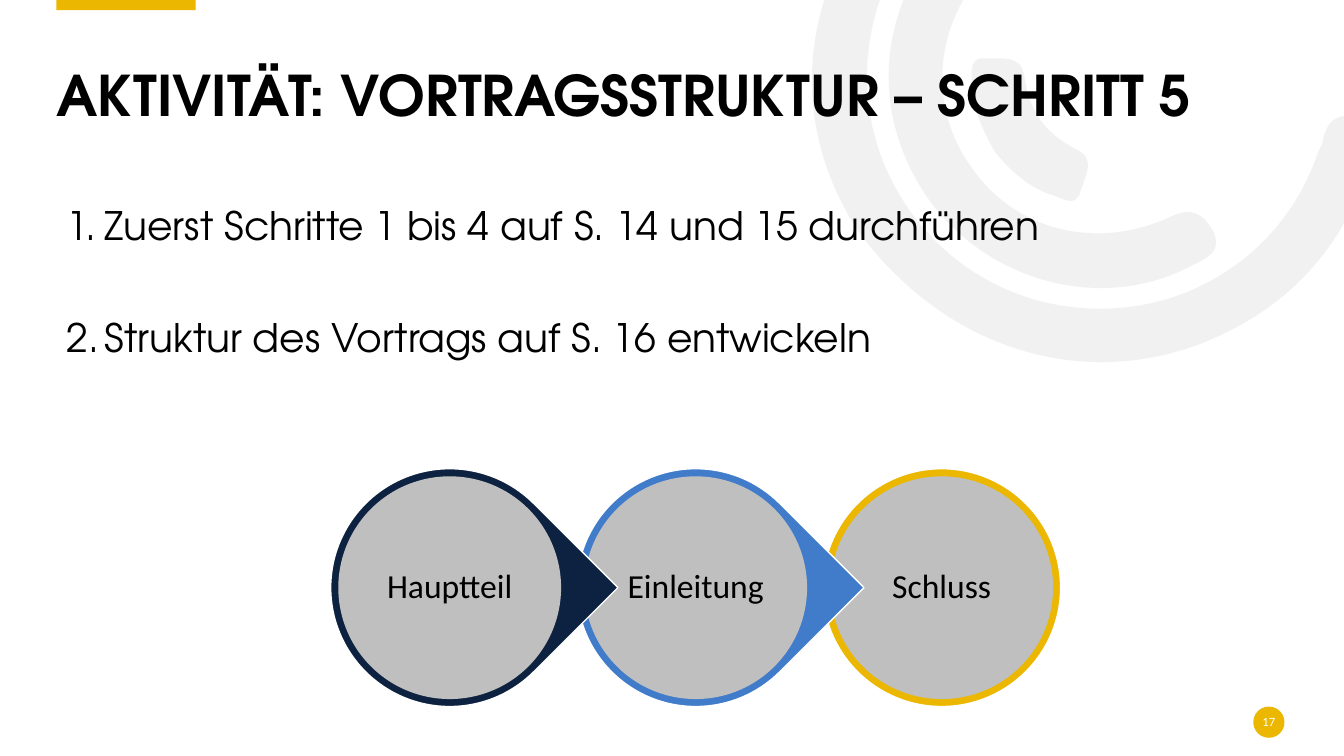
import pptx
import pptx.util
import pptx.dml.color
import pptx.enum.shapes
import pptx.enum.text
from lxml import etree

Inches, Pt = pptx.util.Inches, pptx.util.Pt
SHAPE = pptx.enum.shapes.MSO_SHAPE
ALIGN = pptx.enum.text.PP_ALIGN
ANCHOR = pptx.enum.text.MSO_ANCHOR
DRAWING = "{http://schemas.openxmlformats.org/drawingml/2006/main}"

HEADLINE = "AKTIVITÄT: VORTRAGSSTRUKTUR – SCHRITT 5"
TASKS = ["Zuerst Schritte 1 bis 4 auf S. 14 und 15 durchführen",
         "Struktur des Vortrags auf S. 16 entwickeln"]
STAGES = [("Hauptteil", "0D2240"), ("Einleitung", "407CCA"), ("Schluss", "EBB700")]
PAGE = "17"
HEAD_FONT, LABEL_FONT = "TeX Gyre Adventor", "Calibri"
GOLD, GREY, PALE, BLACK, WHITE = "EBB700", "BFBFBF", "E7E6E6", "000000", "FFFFFF"

ARCS = [
    ((8.51, 2.29), [
        (7.99, 1.49, 7.87, 0.5, 8.38, -0.5), (8.9, -1.52, 9.76, -2.03, 10.9, -2.07),
        (11.05, -2.07, 11.21, -2.1, 11.31, -1.95), (11.44, -1.75, 11.27, -1.54, 10.98, -1.54),
        (9.67, -1.54, 8.65, -0.59, 8.6, 0.68), (8.56, 1.81, 9.36, 2.81, 10.46, 3.02),
        (11.6, 3.24, 12.7, 2.61, 13.07, 1.52), (13.09, 1.48, 13.11, 1.44, 13.12, 1.4),
        (13.16, 1.19, 13.27, 1.11, 13.49, 1.17), (13.73, 1.24, 13.67, 1.41, 13.61, 1.56),
        (13.34, 2.45, 12.78, 3.07, 11.91, 3.41), (10.7, 3.87, 9.36, 3.45, 8.51, 2.29)]),
    ((9.22, 1.99), [
        (8.62, 1.15, 8.69, 0.07, 9.4, -0.68), (9.51, -0.79, 9.62, -0.95, 9.8, -0.78),
        (9.95, -0.64, 9.97, -0.5, 9.79, -0.32), (9.25, 0.26, 9.2, 1.08, 9.65, 1.68),
        (10.08, 2.29, 10.88, 2.49, 11.61, 2.15), (11.82, 2.05, 11.93, 2.12, 12.03, 2.29),
        (12.13, 2.5, 11.97, 2.56, 11.83, 2.63), (10.96, 3.1, 9.83, 2.82, 9.22, 1.99)]),
    ((9.87, 1.51), [
        (9.75, 1.3, 9.64, 1.07, 9.64, 0.82), (9.64, 0.73, 9.61, 0.57, 9.76, 0.58),
        (9.92, 0.59, 10.13, 0.53, 10.16, 0.76), (10.21, 1.1, 10.36, 1.32, 10.67, 1.48),
        (10.88, 1.57, 10.76, 1.76, 10.72, 1.89), (10.68, 2.06, 10.55, 1.98, 10.45, 1.94),
        (10.21, 1.87, 10.03, 1.7, 9.87, 1.51)]),
]


def rgb(value):
    return pptx.dml.color.RGBColor.from_string(value)


def paint(shape, fill, outline=None):
    shape.shadow.inherit = False
    shape.fill.solid()
    shape.fill.fore_color.rgb = rgb(fill)
    if outline:
        shape.line.color.rgb = rgb(outline)
        shape.line.width = Pt(1)
    else:
        shape.line.fill.background()


def add_preset(slide, preset, left, top, width, height, fill, outline=None):
    shape = slide.shapes.add_shape(preset, Inches(left), Inches(top), Inches(width), Inches(height))
    paint(shape, fill, outline)
    return shape


def style(paragraph, size, font, color, align, bold=False):
    paragraph.alignment = align
    paragraph.line_spacing = 0.9
    for run in paragraph.runs:
        run.font.size, run.font.name, run.font.bold = Pt(size), font, bold
        run.font.color.rgb = rgb(color)


def clear_margins(frame):
    frame.margin_left = frame.margin_right = frame.margin_top = frame.margin_bottom = 0


def label(shape, text, size, color):
    frame = shape.text_frame
    clear_margins(frame)
    frame.word_wrap = True
    frame.vertical_anchor = ANCHOR.MIDDLE
    frame.text = text
    style(frame.paragraphs[0], size, LABEL_FONT, color, ALIGN.CENTER)


def bend(outline):
    segments = list(outline.element.iter(DRAWING + "lnTo"))
    for first in range(0, len(segments), 3):
        curve = etree.Element(DRAWING + "cubicBezTo")
        segments[first].addprevious(curve)
        for segment in segments[first:first + 3]:
            curve.append(segment[0])
            segment.getparent().remove(segment)


def add_arcs(slide):
    for start, curves in ARCS:
        builder = slide.shapes.build_freeform(*map(Inches, start))
        points = [(Inches(curve[i]), Inches(curve[i + 1])) for curve in curves for i in (0, 2, 4)]
        builder.add_line_segments(points)
        arc = builder.convert_to_shape()
        bend(arc)
        paint(arc, PALE)
        tint = arc.element.find(f".//{DRAWING}srgbClr")
        etree.SubElement(tint, DRAWING + "alpha", val="53000")
        slide.shapes.title.element.addprevious(arc.element)


def add_headline(slide):
    title = slide.shapes.title
    title.left, title.top, title.width, title.height = map(Inches, (0.56, 0.27, 12.19, 1.01))
    frame = title.text_frame
    clear_margins(frame)
    frame.vertical_anchor = ANCHOR.BOTTOM
    frame.text = HEADLINE
    style(frame.paragraphs[0], 40, HEAD_FONT, BLACK, ALIGN.LEFT, True)


def add_tasks(slide):
    frame = slide.shapes.add_textbox(*map(Inches, (0.56, 2, 11.85, 2.46))).text_frame
    frame.word_wrap = True
    frame.text = "\n".join(TASKS)
    for index, task in enumerate(frame.paragraphs):
        style(task, 28, HEAD_FONT, BLACK, ALIGN.LEFT)
        if index:
            task.space_before = Pt(50)
        properties = task._p.get_or_add_pPr()
        properties.set("marL", str(Inches(0.38)))
        properties.set("indent", str(-Inches(0.38)))
        etree.SubElement(properties, DRAWING + "buAutoNum", type="arabicPeriod")


def add_stages(slide):
    left, top, pitch, outer, inner = 3.28, 4.65, 2.44, 2.36, 2.21
    inset = (outer - inner) / 2
    last = len(STAGES) - 1
    for index, (name, color) in reversed(list(enumerate(STAGES))):
        x = left + index * pitch
        preset = SHAPE.OVAL if index == last else SHAPE.TEAR
        rim = add_preset(slide, preset, x, top, outer, outer, color, WHITE)
        if index < last:
            rim.rotation = 45
        disc = add_preset(slide, SHAPE.OVAL, x + inset, top + inset, inner, inner, GREY)
        label(disc, name, 24, BLACK)


def main():
    deck = pptx.Presentation()
    deck.slide_width, deck.slide_height = Inches(13.33), Inches(7.5)
    slide = deck.slides.add_slide(deck.slide_layouts[5])
    add_arcs(slide)
    add_preset(slide, SHAPE.RECTANGLE, 0.56, -0.02, 1.38, 0.12, GOLD)
    page_badge = add_preset(slide, SHAPE.OVAL, 12.43, 7.01, 0.31, 0.31, GOLD)
    label(page_badge, PAGE, 9, WHITE)
    add_headline(slide)
    add_tasks(slide)
    add_stages(slide)
    deck.save("out.pptx")


if __name__ == "__main__":
    main()
